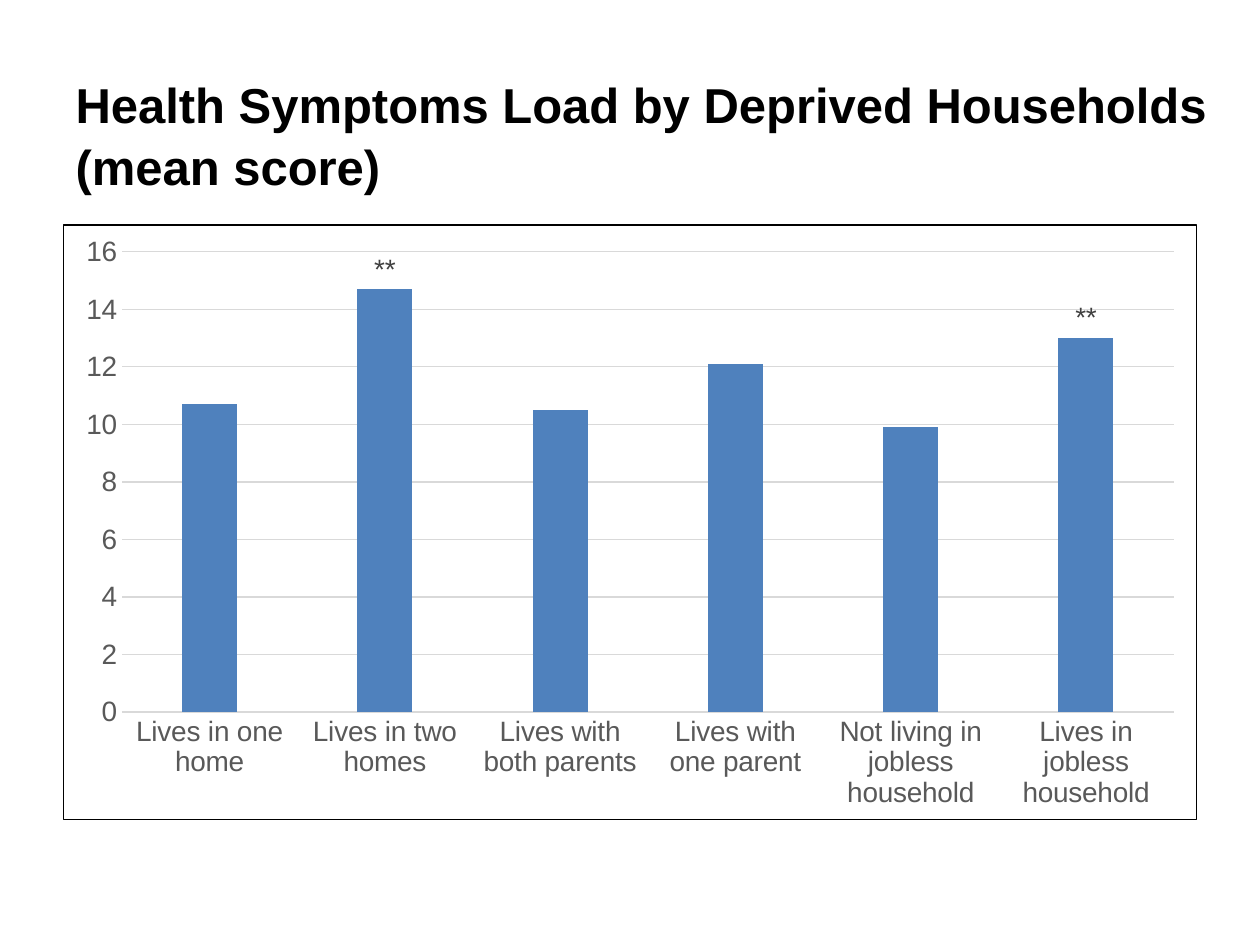
from lxml import etree
from pptx import Presentation
from pptx.chart.data import CategoryChartData
from pptx.dml.color import RGBColor
from pptx.enum.chart import XL_CHART_TYPE as CHART, XL_LABEL_POSITION as LABEL, XL_TICK_MARK as TICK
from pptx.enum.text import MSO_ANCHOR as ANCHOR, PP_ALIGN as ALIGN
from pptx.oxml import parse_xml
from pptx.oxml.ns import nsdecls
from pptx.util import Cm, Pt

SCORES = {
    "Lives in one home": 10.7,
    "Lives in two homes": 14.7,
    "Lives with both parents": 10.5,
    "Lives with one parent": 12.1,
    "Not living in jobless household": 9.9,
    "Lives in jobless household": 13,
}
SIGNIFICANT = ("Lives in two homes", "Lives in jobless household")


def rgb(value):
    return RGBColor.from_string(value)


class SlideBuilder:
    font = "Arial"
    black, grey, grid, bar = "000000", "595959", "D9D9D9", "4F81BD"

    def __init__(self, prs):
        self.slide = prs.slides.add_slide(prs.slide_layouts[5])

    def format_font(self, font, size, color, bold=False):
        for name, value in dict(name=self.font, size=Pt(size), bold=bold).items():
            setattr(font, name, value)
        font.color.rgb = rgb(color)

    def format_line(self, line):
        line.color.rgb = rgb(self.grid)
        line.width = Pt(0.75)

    def title(self, text, left, top, width, height):
        sp = self.slide.shapes.title
        box = dict(left=left, top=top, width=width, height=height)
        for name, value in box.items():
            setattr(sp, name, Cm(value))
        tf = sp.text_frame
        tf.word_wrap = True
        tf.vertical_anchor = ANCHOR.TOP
        p = tf.paragraphs[0]
        p.alignment = ALIGN.LEFT
        p.line_spacing = 1.05
        r = p.add_run()
        r.text = text
        self.format_font(r.font, 28, self.black, bold=True)

    def column_chart(self, scores, starred, left, top, width, height):
        data = CategoryChartData()
        data.categories = list(scores)
        data.add_series("Series 1", scores.values())
        frame = self.slide.shapes.add_chart(
            CHART.COLUMN_CLUSTERED, Cm(left), Cm(top), Cm(width), Cm(height), data)
        chart = frame.chart
        chart.has_legend = chart.has_title = False
        self.format_font(chart.font, 16, self.black)
        self.chart_border(chart)

        plot = chart.plots[0]
        for name, value in dict(gap_width=219, overlap=-27, vary_by_categories=False).items():
            setattr(plot, name, value)
        series = plot.series[0]
        series.format.fill.solid()
        series.format.fill.fore_color.rgb = rgb(self.bar)
        for i, category in enumerate(scores):
            if category in starred:
                self.point_label(series.points[i], "**")

        for axis in (chart.category_axis, chart.value_axis):
            axis.major_tick_mark = axis.minor_tick_mark = TICK.NONE
            self.format_font(axis.tick_labels.font, 16, self.grey)
        self.format_line(chart.category_axis.format.line)
        value_axis = chart.value_axis
        scale = dict(minimum_scale=0, maximum_scale=16, major_unit=2)
        for name, value in scale.items():
            setattr(value_axis, name, value)
        value_axis.format.line.fill.background()
        self.format_line(value_axis.major_gridlines.format.line)

    def point_label(self, point, text):
        label = point.data_label
        r = label.text_frame.paragraphs[0].add_run()
        r.text = text
        self.format_font(r.font, 16, "404040")
        label.position = LABEL.OUTSIDE_END

    def chart_border(self, chart):
        sp_pr = parse_xml(f'<c:spPr {nsdecls("c", "a")}/>')
        chart.element.chart.addnext(sp_pr)
        ns = sp_pr.nsmap["a"]
        for parent, color in ((sp_pr, "FFFFFF"),
                              (etree.SubElement(sp_pr, f"{{{ns}}}ln", w=str(Pt(0.75))), self.black)):
            fill = etree.Element(f"{{{ns}}}solidFill")
            etree.SubElement(fill, f"{{{ns}}}srgbClr", val=color)
            parent.insert(0, fill)


def main():
    prs = Presentation()
    prs.slide_width, prs.slide_height = Cm(25.4), Cm(19.05)
    s = SlideBuilder(prs)
    s.title("Health Symptoms Load by Deprived Households (mean score)",
            1.27, 1.32, 23.62, 2.21)
    s.column_chart(SCORES, SIGNIFICANT, 1.27, 4.52, 22.86, 12.01)
    prs.save("out.pptx")


if __name__ == "__main__":
    main()
